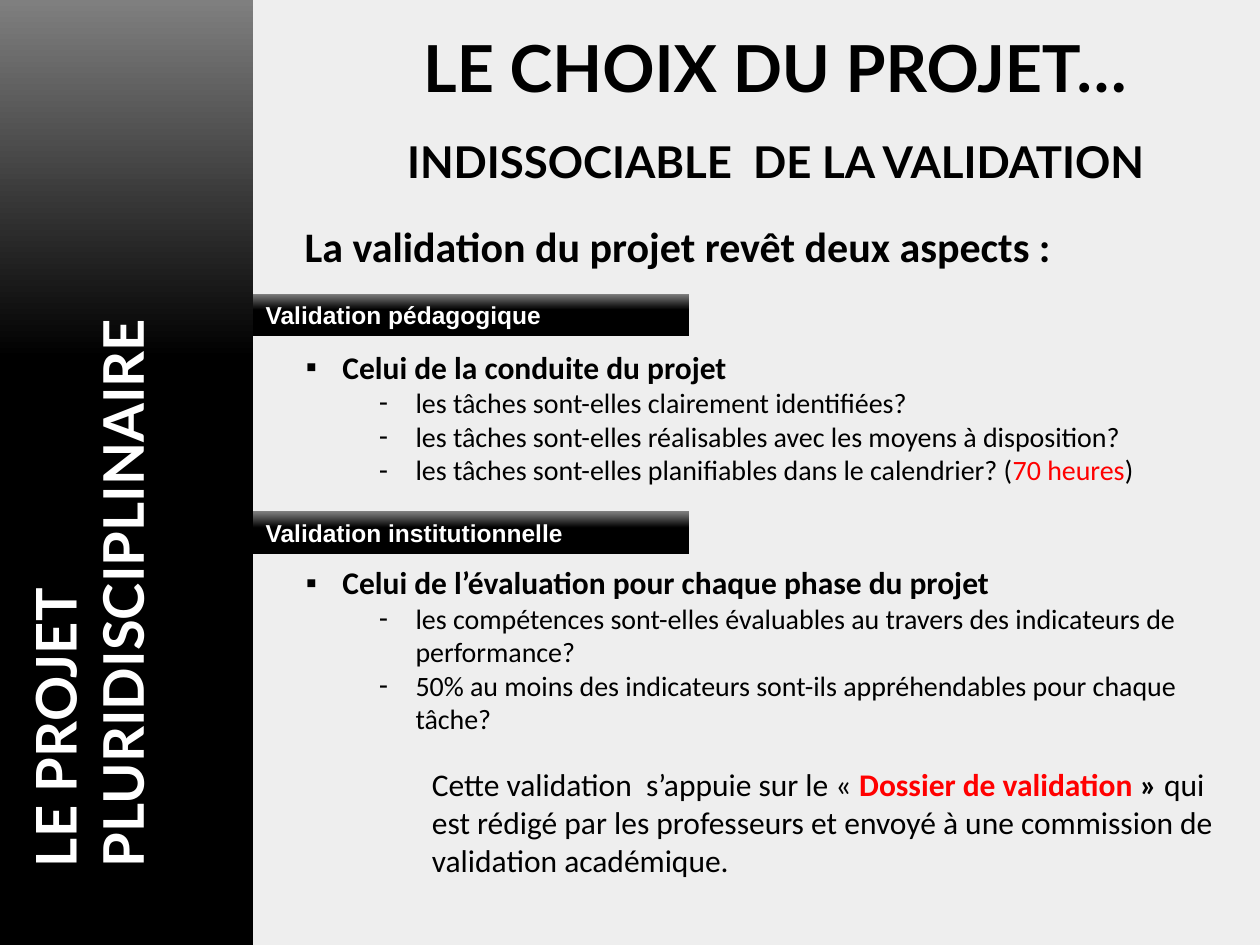
from copy import deepcopy
from dataclasses import dataclass

from lxml.etree import SubElement
from pptx import Presentation
from pptx.dml.color import RGBColor
from pptx.enum.shapes import MSO_SHAPE as Shape
from pptx.enum.text import MSO_ANCHOR as Anchor, MSO_AUTO_SIZE as AutoSize, PP_ALIGN as Align
from pptx.oxml.ns import qn
from pptx.util import Inches, Pt


@dataclass(frozen=True)
class Theme:
    paper: str = "EEEEEE"
    ink: str = "000000"
    light: str = "FFFFFF"
    accent: str = "FF0000"
    sheen: str = "7F7F7F"
    display: str = "Lato"
    body: str = "Calibri"
    label: str = "Arial"
    title_size: float = 37
    sidebar_size: float = 32
    subtitle_size: float = 25
    lead_size: float = 24
    point_size: float = 18
    detail_size: float = 16
    label_size: float = 14


THEME = Theme()
FIRST_POINT = "Celui de la conduite du projet"
FIRST_DETAILS = [
    ["les tâches sont-elles clairement identifiées?"],
    ["les tâches sont-elles réalisables avec les moyens à disposition?"],
    ["les tâches sont-elles planifiables dans le calendrier? (",
     ("70 heures", {"color": THEME.accent}), ")"],
]
SECOND_POINT = "Celui de l’évaluation pour chaque phase du projet"
SECOND_DETAILS = [
    ["les compétences sont-elles évaluables au travers des indicateurs de performance?"],
    ["50% au moins des indicateurs sont-ils appréhendables pour chaque tâche?"],
]
NOTE = [
    "Cette validation  s’appuie sur le « ",
    ("Dossier de validation", {"color": THEME.accent, "bold": True}),
    (" » ", {"bold": True}),
    "qui est rédigé par les professeurs et envoyé à une commission de validation académique.",
]


def write(para, text, *, font=THEME.body, size=THEME.point_size, color=THEME.ink, bold=False):
    """Add one formatted span of text."""
    span = para.add_run()
    span.text = text
    span.font.name = font
    span.font.size = Pt(size)
    span.font.bold = bold
    span.font.color.rgb = RGBColor.from_string(color)


def setup_frame(frame, anchor=Anchor.TOP, bottom=0.05, right=0.1):
    frame.word_wrap = True
    frame.auto_size = AutoSize.NONE
    frame.vertical_anchor = anchor
    frame.margin_left, frame.margin_right = Inches(0.1), Inches(right)
    frame.margin_top, frame.margin_bottom = Inches(0.05), Inches(bottom)


def add_box(slide, left, top, width, height, **layout):
    box = slide.shapes.add_textbox(*map(Inches, (left, top, width, height)))
    setup_frame(box.text_frame, **layout)
    return box.text_frame


def add_band(slide, left, top, width, height):
    """Add a black rectangle that fades to grey at its top edge."""
    band = slide.shapes.add_shape(Shape.RECTANGLE, *map(Inches, (left, top, width, height)))
    band.shadow.inherit = False
    band.line.fill.background()
    band.fill.gradient()
    band.fill.gradient_angle = 90
    stop_list = next(band._element.spPr.iter(qn("a:gsLst")))
    stop_list.insert(1, deepcopy(stop_list[0]))
    colors = (THEME.ink, THEME.ink, THEME.sheen)
    for stop, position, color in zip(band.fill.gradient_stops, (0, 0.62, 1), colors):
        stop.position = position
        stop.color.rgb = RGBColor.from_string(color)
    return band


def add_heading_band(slide, top, text):
    frame = add_band(slide, 2.01, top, 3.46, 0.34).text_frame
    setup_frame(frame, Anchor.MIDDLE)
    para = frame.paragraphs[0]
    para.alignment = Align.LEFT
    write(para, text, font=THEME.label, size=THEME.label_size, color=THEME.light, bold=True)


def add_item(frame, spans, *, margin, hanging=0.29, bullet=None, before=0, **style):
    """Append an indented paragraph; a span is text or (text, format changes)."""
    first = frame.paragraphs[0]
    para = frame.add_paragraph() if first.runs else first
    properties = para._p.get_or_add_pPr()
    properties.set("marL", str(Inches(margin)))
    properties.set("indent", str(-Inches(hanging)))
    if bullet:
        SubElement(properties, qn("a:buFont"), typeface=THEME.label)
        SubElement(properties, qn("a:buChar"), char=bullet)
    para.space_before = Pt(before)
    for item in spans:
        text, changes = (item, {}) if isinstance(item, str) else item
        write(para, text, **{**style, **changes})


def add_aspect(frame, point, details):
    add_item(frame, [point], margin=0.69, bullet="▪", before=44, bold=True)
    for spans in details:
        add_item(frame, spans, margin=1.27, bullet="‐", size=THEME.detail_size)


def add_sidebar(slide):
    add_band(slide, 0, 0, 2.01, 7.5)
    frame = add_box(slide, 0, 0.13, 1.28, 6.85, anchor=Anchor.BOTTOM)
    frame._txBody.bodyPr.set("vert", "vert270")
    para = frame.paragraphs[0]
    style = dict(font=THEME.display, size=THEME.sidebar_size, color=THEME.light, bold=True)
    write(para, "LE PROJET", **style)
    para.add_line_break()
    write(para, "PLURIDISCIPLINAIRE", **style)


def add_titles(slide):
    title = slide.shapes.title
    title.left, title.top, title.width, title.height = map(Inches, (1.85, 0.21, 7.19, 1.48))
    setup_frame(title.text_frame, Anchor.BOTTOM, bottom=0.85)
    para = title.text_frame.paragraphs[0]
    para.alignment = Align.RIGHT
    write(para, "LE CHOIX DU PROJET…", font=THEME.display, size=THEME.title_size, bold=True)

    subtitle = add_box(slide, 2.56, 0.92, 7.19, 1.48, anchor=Anchor.BOTTOM, bottom=0.92)
    para = subtitle.paragraphs[0]
    para.alignment = Align.CENTER
    para.line_spacing = 0.8
    write(para, "INDISSOCIABLE  DE LA VALIDATION",
          font=THEME.display, size=THEME.subtitle_size, bold=True)


def add_body(slide):
    frame = add_box(slide, 1.93, 1.7, 8.07, 5.8, right=0.2)
    add_item(frame, ["La validation du projet revêt deux aspects :"],
             margin=0.78, hanging=0.39, size=THEME.lead_size, bold=True)
    add_aspect(frame, FIRST_POINT, FIRST_DETAILS)
    add_aspect(frame, SECOND_POINT, SECOND_DETAILS)
    add_item(frame, NOTE, margin=1.4, hanging=0, before=17)


def main():
    deck = Presentation()
    deck.slide_width, deck.slide_height = Inches(10), Inches(7.5)
    slide = deck.slides.add_slide(deck.slide_layouts[5])
    slide.background.fill.solid()
    slide.background.fill.fore_color.rgb = RGBColor.from_string(THEME.paper)

    # Sidebar and headings
    add_sidebar(slide)
    add_titles(slide)

    # The two aspects and their heading bands
    add_body(slide)
    add_heading_band(slide, 2.33, "Validation pédagogique")
    add_heading_band(slide, 4.06, "Validation institutionnelle")

    deck.save("out.pptx")


if __name__ == "__main__":
    main()
